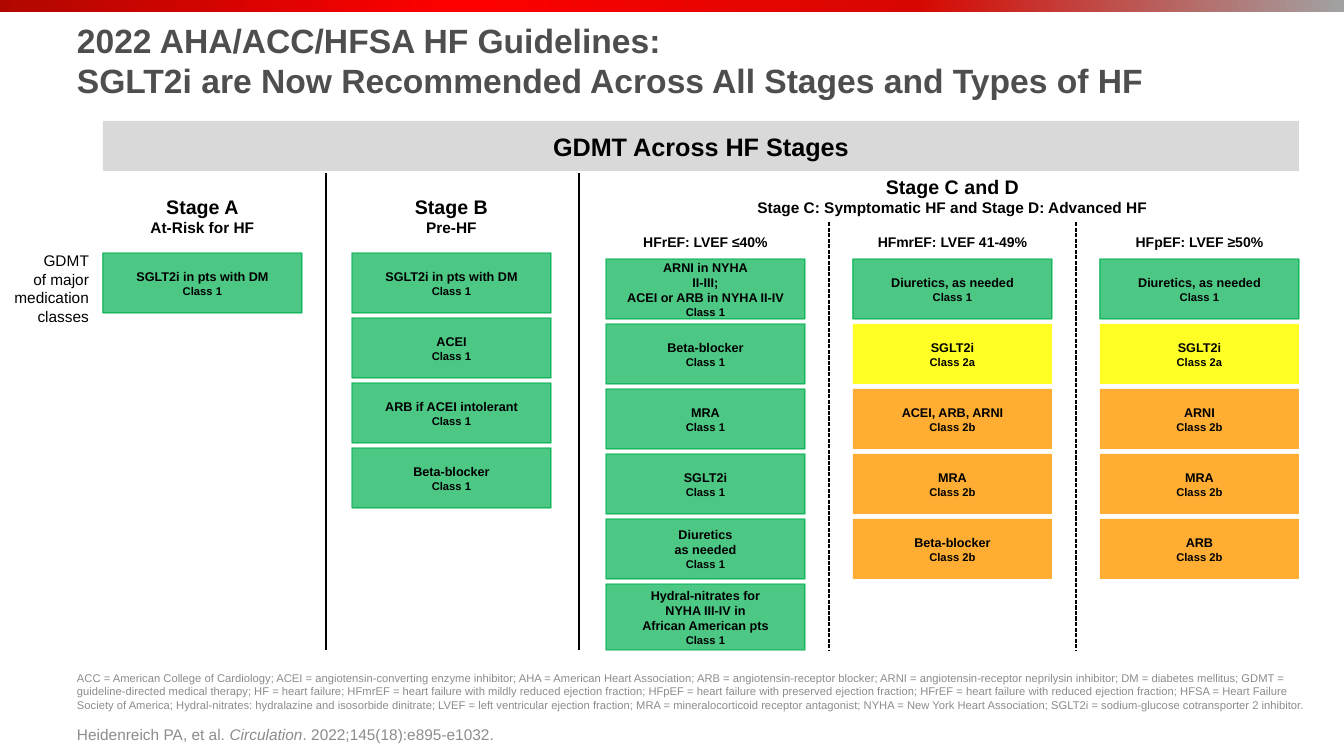
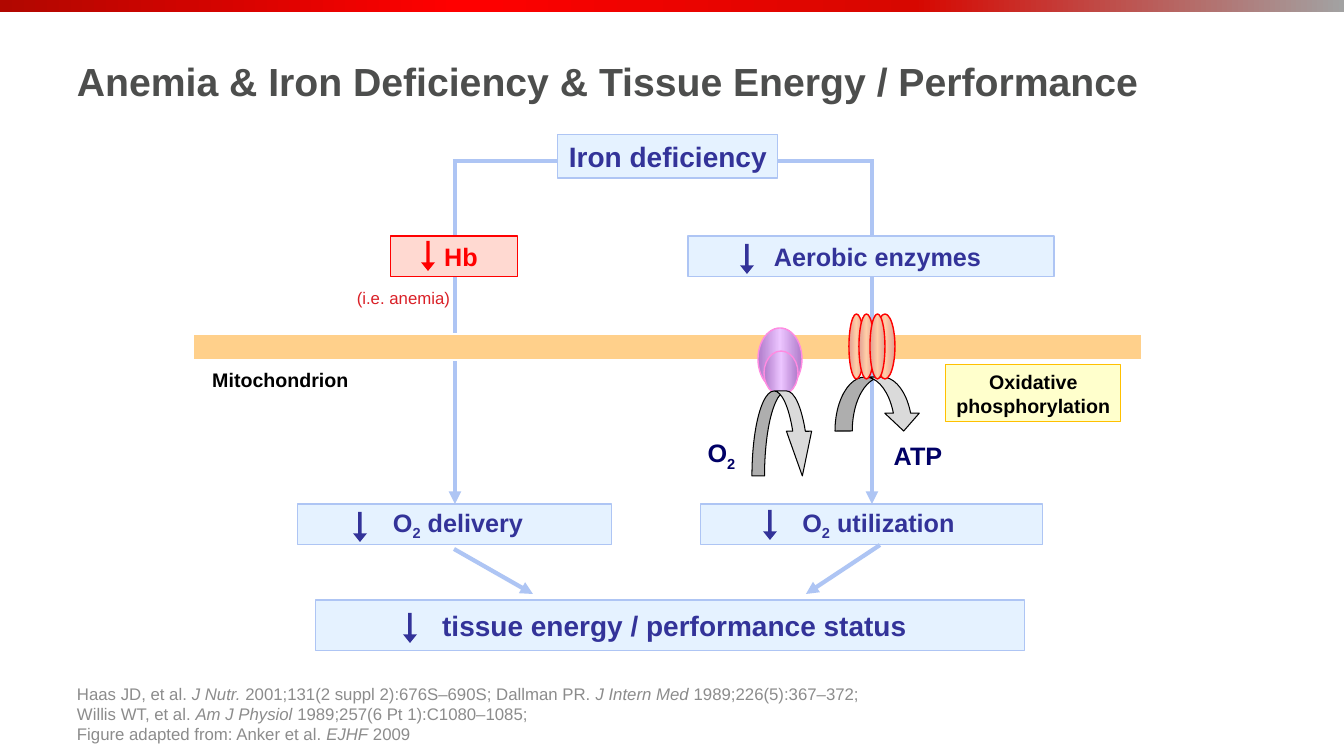
from dataclasses import dataclass
from typing import NamedTuple

from lxml.etree import SubElement
from pptx import Presentation
from pptx.dml.color import RGBColor
from pptx.enum.dml import MSO_LINE
from pptx.enum.shapes import MSO_CONNECTOR, MSO_SHAPE
from pptx.enum.text import MSO_ANCHOR, PP_ALIGN
from pptx.oxml.ns import qn
from pptx.util import Pt

SCALE = 914400 / 100.8
WIDE, HIGH = 1344, 756
TOP, MID, LOW = MSO_ANCHOR.TOP, MSO_ANCHOR.MIDDLE, MSO_ANCHOR.BOTTOM
LEFT, CENTER, RIGHT = PP_ALIGN.LEFT, PP_ALIGN.CENTER, PP_ALIGN.RIGHT


class Type(NamedTuple):
    size: int
    color: str = "000000"
    bold: bool = True


class Look(NamedTuple):
    fill: object
    line: str = ""
    width: float = 0.75
    alpha: int = 100


@dataclass(frozen=True)
class Theme:
    face: str = "Arial"
    band: tuple = ((0, "B10700"), (14, "D00400"), (34, "FF0000"),
                   (68, "D70700"), (100, "A2A2A2"))
    title: Type = Type(24, "4D4E4D")
    large: Type = Type(28, "4D4E4D")
    note: Type = Type(8, "8C8C8C", False)
    cite: Type = Type(11, "8C8C8C", False)
    source: Type = Type(12, "8C8C8C", False)
    banner: Type = Type(18)
    stage: Type = Type(14)
    sub: Type = Type(11)
    side: Type = Type(11, bold=False)
    head: Type = Type(10)
    drug: Type = Type(9)
    rank: Type = Type(8)
    node: Type = Type(18, "333399")
    main: Type = Type(20, "333399")
    alarm: Type = Type(18, "FF0000")
    aside: Type = Type(12, "DA2027", False)
    gas: Type = Type(18, "000066")
    gray: Look = Look("D9D9D9")
    blue: Look = Look("E5F2FF", "AEC5F4")
    red: Look = Look("FFD9D1", "FF0000")
    cream: Look = Look("FFFFCC", "FFC000")
    wall: Look = Look("FFD08B", "FFFFFF", 1)
    curve: Look = Look("DADADA", "000000")
    purple: Look = Look(((0, "B07BCB"), (50, "ECC5FF"), (100, "B07BCB")),
                        "FF8BE1", 1)
    coral: Look = Look(((0, "E1A093"), (50, "FFCDA7"), (100, "E1A093")),
                       "FF0000", 1)
    flow: str = "AEC5F4"
    rule: str = "000000"


THEME = Theme()
RANKS = {"1": Look("00B050", "00B050", 1, 70),
         "2a": Look("FFFF00", alpha=85),
         "2b": Look("FF9900", alpha=80)}


def px(*sizes):
    return [round(size * SCALE) for size in sizes]


def rgb(code):
    return RGBColor.from_string(code)


def write(frame, paras, align=CENTER, anchor=MID, pad=0, gap=0):
    """Fill a frame with (type, run, ...) paragraphs; a run is text or (text, mark)."""
    frame.word_wrap = True
    frame.vertical_anchor = anchor
    frame.margin_left = px(pad)[0]
    frame.margin_right = frame.margin_top = frame.margin_bottom = 0
    for i, (kind, *runs) in enumerate(paras):
        para = frame.add_paragraph() if i else frame.paragraphs[0]
        para.alignment = align
        if i and gap:
            para.space_before = Pt(gap)
        for item in runs:
            words, mark = (item, "") if isinstance(item, str) else item
            run = para.add_run()
            run.text = words
            font = run.font
            font.name, font.size, font.bold = THEME.face, Pt(kind.size), kind.bold
            font.color.rgb = rgb(kind.color)
            if mark == "slant":
                font.italic = True
            elif mark == "sub":
                run.font._element.set("baseline", "-25000")


def label(slide, area, paras, **style):
    write(slide.shapes.add_textbox(*px(*area)).text_frame, paras, **style)


def blend(fill, stops):
    """Apply a left-to-right gradient with any number of stops."""
    fill.gradient()
    fill.gradient_angle = 0
    stem = fill._xPr.find(qn("a:gradFill")).find(qn("a:gsLst"))
    stem.clear()
    for place, code in stops:
        stop = SubElement(stem, qn("a:gs"), pos=str(place * 1000))
        SubElement(stop, qn("a:srgbClr"), val=code)


def draw(slide, area, look, form=MSO_SHAPE.RECTANGLE, bends=()):
    shape = slide.shapes.add_shape(form, *px(*area))
    shape.shadow.inherit = False
    for i, bend in enumerate(bends):
        shape.adjustments[i] = bend
    if isinstance(look.fill, str):
        shape.fill.solid()
        shape.fill.fore_color.rgb = rgb(look.fill)
    else:
        blend(shape.fill, look.fill)
    if look.line:
        shape.line.color.rgb = rgb(look.line)
        shape.line.width = Pt(look.width)
    else:
        shape.line.fill.background()
    if look.alpha < 100:
        for tint in shape.element.spPr.iter(qn("a:srgbClr")):
            SubElement(tint, qn("a:alpha"), val=str(look.alpha * 1000))
    return shape


def box(slide, area, look, paras, **style):
    shape = draw(slide, area, look)
    write(shape.text_frame, paras, **style)
    return shape


def wire(slide, ends, color, width, dash=False, head=False, goal=None):
    """Draw a straight line, joined to the top of goal if there is one."""
    line = slide.shapes.add_connector(MSO_CONNECTOR.STRAIGHT, *px(*ends))
    line.line.color.rgb = rgb(color)
    line.line.width = Pt(width)
    if dash:
        line.line.dash_style = MSO_LINE.SQUARE_DOT
    props = line.element.spPr
    if head:
        SubElement(props.find(qn("a:ln")), qn("a:tailEnd"), type="triangle")
    SubElement(props, qn("a:effectLst"))
    if goal is not None:
        line.end_connect(goal, 0)


def start(deck, kind, lines, anchor, foot, gap=0):
    """Add a slide with the band, title and footer that all slides share."""
    slide = deck.slides.add_slide(deck.slide_layouts[6])
    draw(slide, (0, 0, WIDE, 12), Look(THEME.band))
    label(slide, (77, 20, 1240, 122), [(kind, line) for line in lines],
          align=LEFT, anchor=anchor)
    label(slide, (77, 700, 1239, 44), foot, align=LEFT, anchor=LOW, gap=gap)
    return slide


def stack(slide, left, top, drugs):
    """Stack one column of drug boxes, each (class, line, ...)."""
    for i, (rank, *lines) in enumerate(drugs):
        high = 66 if len(lines) == 3 and i == 5 else 60
        paras = [(THEME.drug, line) for line in lines]
        paras.append((THEME.rank, f"Class {rank}"))
        box(slide, (left, top + 65 * i, 199, high), RANKS[rank], paras)


def stages(deck):
    foot = [
        (THEME.note,
         "ACC = American College of Cardiology; ACEI = angiotensin-converting "
         "enzyme inhibitor; AHA = American Heart Association; ARB = "
         "angiotensin-receptor blocker; ARNI = angiotensin-receptor neprilysin "
         "inhibitor; DM = diabetes mellitus; GDMT = guideline-directed medical "
         "therapy; HF = heart failure; HFmrEF = heart failure with mildly reduced "
         "ejection fraction; HFpEF = heart failure with preserved ejection "
         "fraction; HFrEF = heart failure with reduced ejection fraction; HFSA = "
         "Heart Failure Society of America; Hydral-nitrates: hydralazine and "
         "isosorbide dinitrate; LVEF = left ventricular ejection fraction; MRA = "
         "mineralocorticoid receptor antagonist; NYHA = New York Heart "
         "Association; SGLT2i = sodium-glucose cotransporter 2 inhibitor."),
        (THEME.cite, "Heidenreich PA, et al. ", ("Circulation", "slant"),
         ". 2022;145(18):e895-e1032."),
    ]
    slide = start(deck, THEME.title, [
        "2022 AHA/ACC/HFSA HF Guidelines:",
        "SGLT2i are Now Recommended Across All Stages and Types of HF",
    ], TOP, foot, gap=10)
    box(slide, (103, 121, 1196, 50), THEME.gray,
        [(THEME.banner, "GDMT Across HF Stages")])
    label(slide, (0, 244, 89, 89),
          [(THEME.side, "GDMT"), (THEME.side, "of major medication classes")],
          align=RIGHT)

    for left, top, wide, name, about in (
            (103, 188, 199, "Stage A", "At-Risk for HF"),
            (352, 188, 199, "Stage B", "Pre-HF"),
            (606, 168, 693, "Stage C and D",
             "Stage C: Symptomatic HF and Stage D: Advanced HF")):
        label(slide, (left, top, wide, 55),
              [(THEME.stage, name), (THEME.sub, about)])

    first = ("1", "SGLT2i in pts with DM")
    stack(slide, 103, 253, [first])
    stack(slide, 352, 253, [first, ("1", "ACEI"),
                            ("1", "ARB if ACEI intolerant"),
                            ("1", "Beta-blocker")])
    water = ("1", "Diuretics, as needed")
    types = {
        "HFrEF: LVEF ≤40%": [
            ("1", "ARNI in NYHA", "II-III;", "ACEI or ARB in NYHA II-IV"),
            ("1", "Beta-blocker"), ("1", "MRA"), ("1", "SGLT2i"),
            ("1", "Diuretics", "as needed"),
            ("1", "Hydral-nitrates for", "NYHA III-IV in",
             "African American pts")],
        "HFmrEF: LVEF 41-49%": [
            water, ("2a", "SGLT2i"), ("2b", "ACEI, ARB, ARNI"),
            ("2b", "MRA"), ("2b", "Beta-blocker")],
        "HFpEF: LVEF ≥50%": [
            water, ("2a", "SGLT2i"), ("2b", "ARNI"),
            ("2b", "MRA"), ("2b", "ARB")],
    }
    for i, (name, drugs) in enumerate(types.items()):
        left = 606 + 247 * i
        label(slide, (left, 223, 199, 37), [(THEME.head, name)])
        stack(slide, left, 259, drugs)
        if i:
            wire(slide, (left - 24, 222, left - 24, 650), THEME.rule, 1, dash=True)
    for x in (326, 579):
        wire(slide, (x, 173, x, 650), THEME.rule, 2)


def iron(deck):
    foot = [
        (THEME.source, "Haas JD, et al. ", ("J Nutr. ", "slant"),
         "2001;131(2 suppl 2):676S–690S; Dallman PR. ",
         ("J Intern Med ", "slant"), "1989;226(5):367–372;"),
        (THEME.source, "Willis WT, et al. ", ("Am J Physiol ", "slant"),
         "1989;257(6 Pt 1):C1080–1085;"),
        (THEME.source, "Figure adapted from: Anker et al. ",
         ("EJHF", "slant"), " 2009"),
    ]
    slide = start(deck, THEME.large,
                  ["Anemia & Iron Deficiency & Tissue Energy / Performance"],
                  MID, foot)
    two = ("2", "sub")
    for left, wide, pad, word in ((298, 314, 6, " delivery"),
                                  (701, 342, 13, " utilization")):
        goal = box(slide, (left, 504, wide, 41), THEME.blue,
                   [(THEME.node, "O", two, word)], pad=pad)
        x = left + wide // 2
        wire(slide, (x, 161, x, 504), THEME.flow, 3, head=True, goal=goal)
    wire(slide, (453, 161, 874, 161), THEME.flow, 3)
    for ends in ((454, 549, 533, 594), (880, 545, 806, 594)):
        wire(slide, ends, THEME.flow, 3, head=True)
    draw(slide, (193, 334, 949, 26), THEME.wall)

    for area, look, pad, paras in (
            ((558, 134, 220, 44), THEME.blue, 0, [(THEME.main, "Iron deficiency")]),
            ((391, 236, 127, 41), THEME.red, 13, [(THEME.alarm, "Hb")]),
            ((688, 236, 366, 41), THEME.blue, 13, [(THEME.node, "Aerobic enzymes")]),
            ((316, 600, 709, 51), THEME.blue, 8,
             [(THEME.main, "tissue energy / performance status")]),
            ((946, 365, 175, 57), THEME.cream, 0,
             [(THEME.stage, "Oxidative"), (THEME.stage, "phosphorylation")])):
        box(slide, area, look, paras, pad=pad)

    for area in ((758, 328, 44, 62), (764, 351, 34, 44)):
        draw(slide, area, THEME.purple, MSO_SHAPE.OVAL)
    for area, bends in (((835, 377, 86, 54), (0.32, 0.64, 0.33)),
                        ((752, 391, 63, 85), (0.2, 0.4, 0.71))):
        draw(slide, area, THEME.curve, MSO_SHAPE.CURVED_DOWN_ARROW, bends)
    for left, wide in ((849, 15), (875, 20), (859, 15), (870, 15)):
        draw(slide, (left, 314, wide, 65), THEME.coral, MSO_SHAPE.OVAL)

    for area, para in (
            ((883, 435, 70, 40), (THEME.gas, "ATP")),
            ((697, 435, 49, 40), (THEME.gas, "O", two)),
            ((202, 363, 157, 34), (THEME.stage, "Mitochondrion")),
            ((346, 283, 115, 30), (THEME.aside, "(i.e. anemia)"))):
        label(slide, area, [para])

    for left, top, kind in ((421, 241, THEME.alarm), (353, 512, THEME.node),
                            (403, 613, THEME.node), (763, 510, THEME.node),
                            (740, 244, THEME.node)):
        draw(slide, (left, top, 14, 30), Look(kind.color),
             MSO_SHAPE.DOWN_ARROW, (0.25, 0.62))


def main():
    deck = Presentation()
    deck.slide_width, deck.slide_height = px(WIDE, HIGH)
    stages(deck)
    iron(deck)
    deck.save("out.pptx")


if __name__ == "__main__":
    main()
